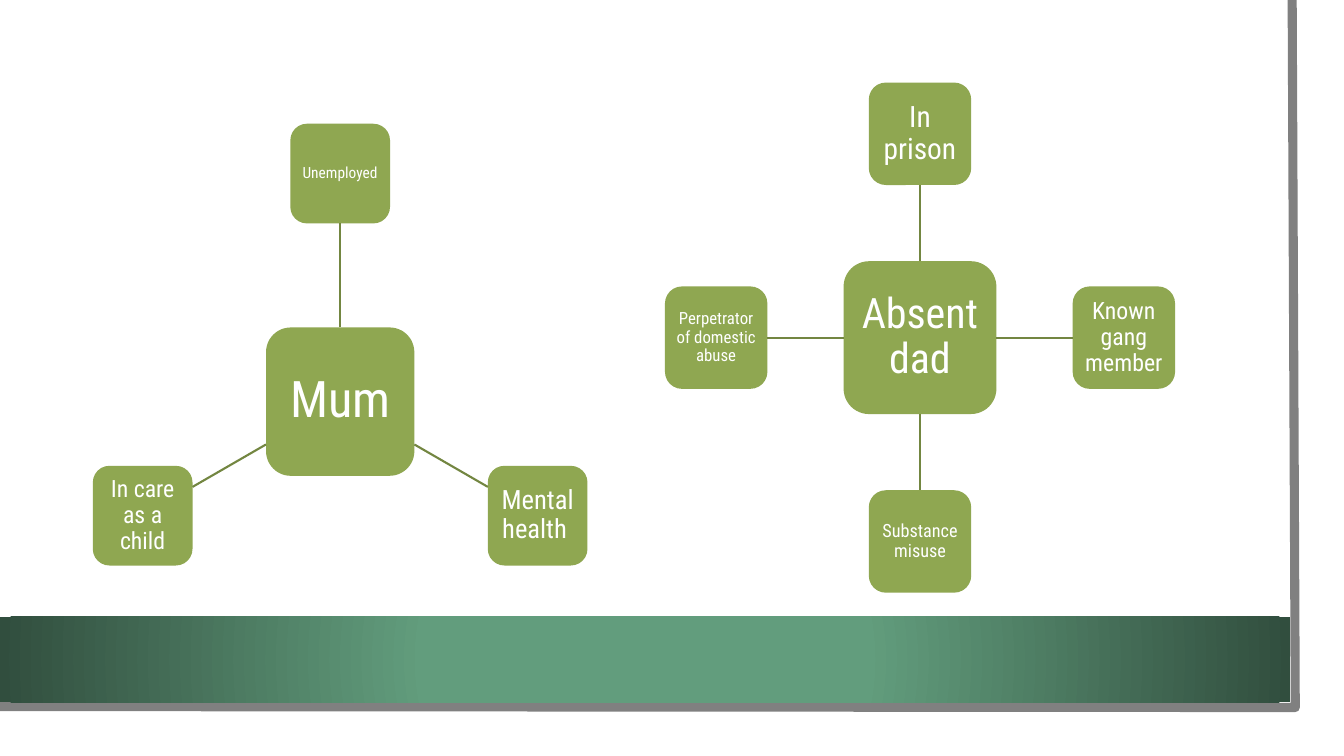
"""Build a slide with two radial diagrams of family circumstances."""
import math

from lxml import etree
from pptx import Presentation
from pptx.dml.color import RGBColor
from pptx.enum.shapes import MSO_CONNECTOR, MSO_SHAPE
from pptx.enum.text import MSO_ANCHOR, PP_ALIGN
from pptx.oxml.ns import qn
from pptx.util import Pt

RECTANGLE = MSO_SHAPE.RECTANGLE
ROUNDED = MSO_SHAPE.ROUNDED_RECTANGLE
STRAIGHT = MSO_CONNECTOR.STRAIGHT
MIDDLE = MSO_ANCHOR.MIDDLE
CENTER = PP_ALIGN.CENTER

FONT = "Roboto Condensed"
NODE_COLOR, LINK_COLOR, TEXT_COLOR = "8FA751", "738641", "FFFFFF"
BORDER_COLOR = "808080"
BORDER_POINTS = [(923, 0), (925.2, 505.4), (0, 504.7)]
BAND_BOX = (0, 440.6, 921.6, 61.2)
BAND_STOPS = [(0.34, "629D7D"), (1, "314E3E")]

DIAGRAMS = [
    {
        "hub": ("Mum", 36), "center": (243, 286.9),
        "hub_side": 106, "side": 71.2, "radius": 162.9,
        "satellites": [
            (270, "Unemployed", 11),
            (30, "Mental health ", 19),
            (150, "In care as a child", 17),
        ],
    },
    {
        "hub": ("Absent dad", 30), "center": (657.2, 241.2),
        "hub_side": 109.2, "side": 73.2, "radius": 145.6,
        "satellites": [
            (270, "In prison", 21),
            (0, "Known gang member", 17),
            (90, "Substance misuse", 13),
            (180, "Perpetrator of domestic abuse", 12),
        ],
    },
]


def color(value):
    return RGBColor.from_string(value)


def add_border(slide):
    points = [(Pt(x), Pt(y)) for x, y in BORDER_POINTS]
    builder = slide.shapes.build_freeform(*points[0])
    builder.add_line_segments(points[1:], close=False)
    border = builder.convert_to_shape()
    border.shadow.inherit = False
    border.fill.background()
    border.line.color.rgb = color(BORDER_COLOR)
    border.line.width = Pt(6.5)


def add_band(slide):
    band = slide.shapes.add_shape(RECTANGLE, *map(Pt, BAND_BOX))
    band.shadow.inherit = False
    band.line.fill.background()
    band.fill.gradient()
    for stop, (position, value) in zip(band.fill.gradient_stops, BAND_STOPS):
        stop.position = position
        stop.color.rgb = color(value)
    gradient = band._element.spPr.find(qn("a:gradFill"))
    gradient.remove(gradient.find(qn("a:lin")))
    circle = etree.SubElement(gradient, qn("a:path"), path="circle")
    etree.SubElement(circle, qn("a:fillToRect"), l="50000", t="50000", r="50000", b="50000")


def add_node(slide, center, side, text, size):
    x, y = center
    node = slide.shapes.add_shape(ROUNDED, Pt(x - side / 2), Pt(y - side / 2), Pt(side), Pt(side))
    node.shadow.inherit = False
    node.fill.solid()
    node.fill.fore_color.rgb = color(NODE_COLOR)
    node.line.fill.background()
    frame = node.text_frame
    frame.word_wrap = True
    frame.vertical_anchor = MIDDLE
    inset = Pt(size * 0.2)
    frame.margin_left = frame.margin_right = inset
    frame.margin_top = frame.margin_bottom = inset
    paragraph = frame.paragraphs[0]
    paragraph.alignment = CENTER
    paragraph.line_spacing = 0.9
    run = paragraph.add_run()
    run.text = text
    run.font.name = FONT
    run.font.size = Pt(size)
    run.font.color.rgb = color(TEXT_COLOR)
    return node


def add_link(slide, start, end):
    link = slide.shapes.add_connector(STRAIGHT, *map(Pt, start + end))
    link.line.color.rgb = color(LINK_COLOR)
    link.line.width = Pt(1.5)
    etree.SubElement(link._element.spPr, qn("a:effectLst"))
    return link


def add_diagram(slide, diagram):
    center, side, radius = diagram["center"], diagram["side"], diagram["radius"]
    hub = add_node(slide, center, diagram["hub_side"], *diagram["hub"])
    for angle, text, size in diagram["satellites"]:
        across, down = math.cos(math.radians(angle)), math.sin(math.radians(angle))
        reach = 0.5 / max(abs(across), abs(down))

        def along(distance):
            return center[0] + distance * across, center[1] + distance * down

        satellite = add_node(slide, along(radius), side, text, size)
        link = add_link(slide, along(diagram["hub_side"] * reach), along(radius - side * reach))
        if angle % 90 == 0:
            site = 3 - angle // 90
            link.begin_connect(hub, site)
            link.end_connect(satellite, (site + 2) % 4)


def main():
    presentation = Presentation()
    presentation.slide_width, presentation.slide_height = Pt(960), Pt(540)
    slide = presentation.slides.add_slide(presentation.slide_layouts[6])
    add_border(slide)
    add_band(slide)
    for diagram in DIAGRAMS:
        add_diagram(slide, diagram)
    presentation.save("out.pptx")


if __name__ == "__main__":
    main()
